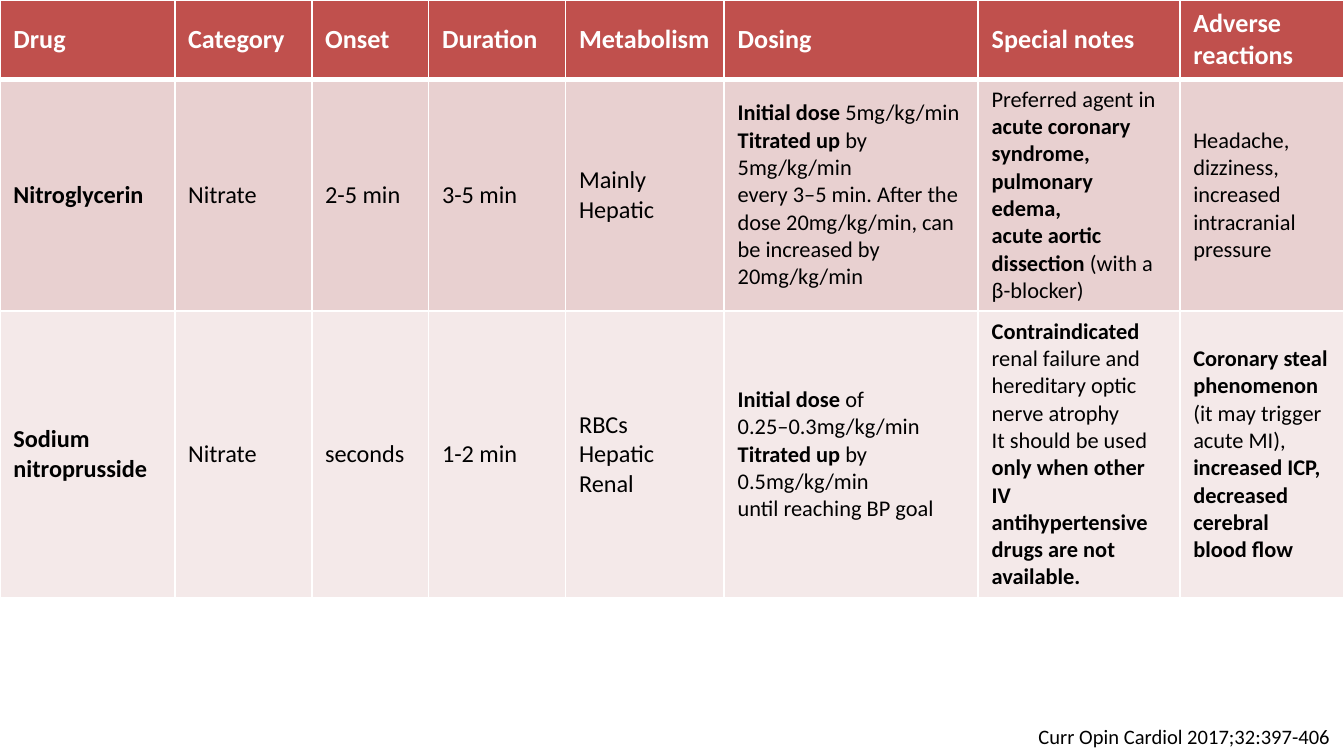
from typing import NamedTuple

from lxml.etree import SubElement
from pptx import Presentation
from pptx.dml.color import RGBColor
from pptx.enum.lang import MSO_LANGUAGE_ID
from pptx.enum.text import MSO_ANCHOR, PP_ALIGN
from pptx.oxml.ns import qn
from pptx.util import Inches, Pt

FONT = "Calibri"
WHITE, BLACK = "FFFFFF", "000000"
COL_WIDTHS = [1.3, 1.02, 0.87, 1.02, 1.18, 1.89, 1.5, 1.22]
FIRST_DETAIL_COL = 5


class Run(NamedTuple):
    text: str
    bold: bool = False


Paragraph = list[Run]


class TableRow(NamedTuple):
    height: float
    fill: str
    cells: list[list[Paragraph]]
    color: str = BLACK
    size: int = 13
    detail_size: int = 12
    top_border: int = 1
    bottom_border: int = 1


def bold(text: str) -> Run:
    return Run(text, True)


def plain(*lines: str) -> list[Paragraph]:
    return [[Run(line)] for line in lines]


def strong(*lines: str) -> list[Paragraph]:
    return [[bold(line)] for line in lines]


HEADINGS = ["Drug", "Category", "Onset", "Duration", "Metabolism", "Dosing",
            "Special notes", "Adverse reactions"]

ROWS = [
    TableRow(0.59, "C0504D", [strong(h) for h in HEADINGS], color=WHITE,
             size=14, detail_size=14, bottom_border=3),
    TableRow(1.28, "E8D0D0", [
        strong("Nitroglycerin"),
        plain("Nitrate"),
        plain("2-5 min"),
        plain("3-5 min"),
        plain("Mainly Hepatic"),
        [[bold("Initial dose "), Run("5mg/kg/min")],
         [bold("Titrated up "), Run("by 5mg/kg/min")],
         [Run("every 3–5 min. After the dose 20mg/kg/min, "
              "can be increased by 20mg/kg/min")]],
        [[Run("Preferred agent in "), bold("acute coronary syndrome,")],
         [bold("pulmonary edema,")],
         [bold("acute aortic dissection "), Run("(with a")],
         [Run("β-blocker)")]],
        plain("Headache, dizziness,", "increased intracranial", "pressure"),
    ], top_border=3),
    TableRow(1.68, "F4E9E9", [
        strong("Sodium nitroprusside"),
        plain("Nitrate"),
        plain("seconds"),
        plain("1-2 min"),
        plain("RBCs", "Hepatic", "Renal"),
        [[bold("Initial dose "), Run("of")],
         [Run("0.25–0.3mg/kg/min")],
         [bold("Titrated up "), Run("by 0.5mg/kg/min")],
         [Run("until reaching BP goal")]],
        [[bold("Contraindicated"),
          Run(" renal failure and hereditary optic nerve atrophy")],
         [Run("It should be used "),
          bold("only when other IV antihypertensive")],
         [bold("drugs are not available.")]],
        [[bold("Coronary steal")],
         [bold("phenomenon "), Run("(it may trigger acute MI), "),
          bold("increased ICP,")],
         [bold("decreased cerebral")],
         [bold("blood flow")]],
    ]),
]


def rgb(value: str) -> RGBColor:
    return RGBColor.from_string(value)


def add_run(p, run: Run, size: int, color: str) -> None:
    r = p.add_run()
    r.text = run.text
    r.font.name = FONT
    r.font.size = Pt(size)
    r.font.bold = run.bold
    r.font.color.rgb = rgb(color)
    r.font.language_id = MSO_LANGUAGE_ID.ENGLISH_US


def write(tf, paragraphs: list[Paragraph], size: int, color: str) -> None:
    for i, runs in enumerate(paragraphs):
        p = tf.add_paragraph() if i else tf.paragraphs[0]
        for run in runs:
            add_run(p, run, size, color)


def set_borders(cell, top: int, bottom: int) -> None:
    """Draw white cell borders; must come before the cell fill in the XML."""
    tc_pr = cell._tc.get_or_add_tcPr()
    for side, width in {"L": 1, "R": 1, "T": top, "B": bottom}.items():
        ln = SubElement(tc_pr, qn(f"a:ln{side}"), w=str(Pt(width)))
        fill = SubElement(ln, qn("a:solidFill"))
        SubElement(fill, qn("a:srgbClr"), val=WHITE)


def add_drug_table(slide) -> None:
    table = slide.shapes.add_table(
        len(ROWS), len(COL_WIDTHS), Inches(0), Inches(0), Inches(10),
        Inches(4.19)).table
    for column, width in zip(table.columns, COL_WIDTHS):
        column.width = Inches(width)
    for i, row in enumerate(ROWS):
        table.rows[i].height = Inches(row.height)
        for j, paragraphs in enumerate(row.cells):
            cell = table.cell(i, j)
            set_borders(cell, row.top_border, row.bottom_border)
            cell.fill.solid()
            cell.fill.fore_color.rgb = rgb(row.fill)
            cell.vertical_anchor = MSO_ANCHOR.MIDDLE
            size = row.detail_size if j >= FIRST_DETAIL_COL else row.size
            write(cell.text_frame, paragraphs, size, row.color)


def add_citation(slide) -> None:
    tf = slide.shapes.add_textbox(
        Inches(2.64), Inches(5.38), Inches(7.39), Inches(0.25)).text_frame
    tf.word_wrap = True
    write(tf, plain("Curr Opin Cardiol 2017;32:397-406 "), 11, BLACK)
    p = tf.paragraphs[0]
    p.alignment = PP_ALIGN.RIGHT
    p.line_spacing = Pt(10)


def main() -> None:
    prs = Presentation()
    prs.slide_width = Inches(10)
    prs.slide_height = prs.slide_width * 9 // 16
    s = prs.slides.add_slide(prs.slide_layouts[6])
    add_drug_table(s)
    add_citation(s)
    prs.save("out.pptx")


if __name__ == "__main__":
    main()
